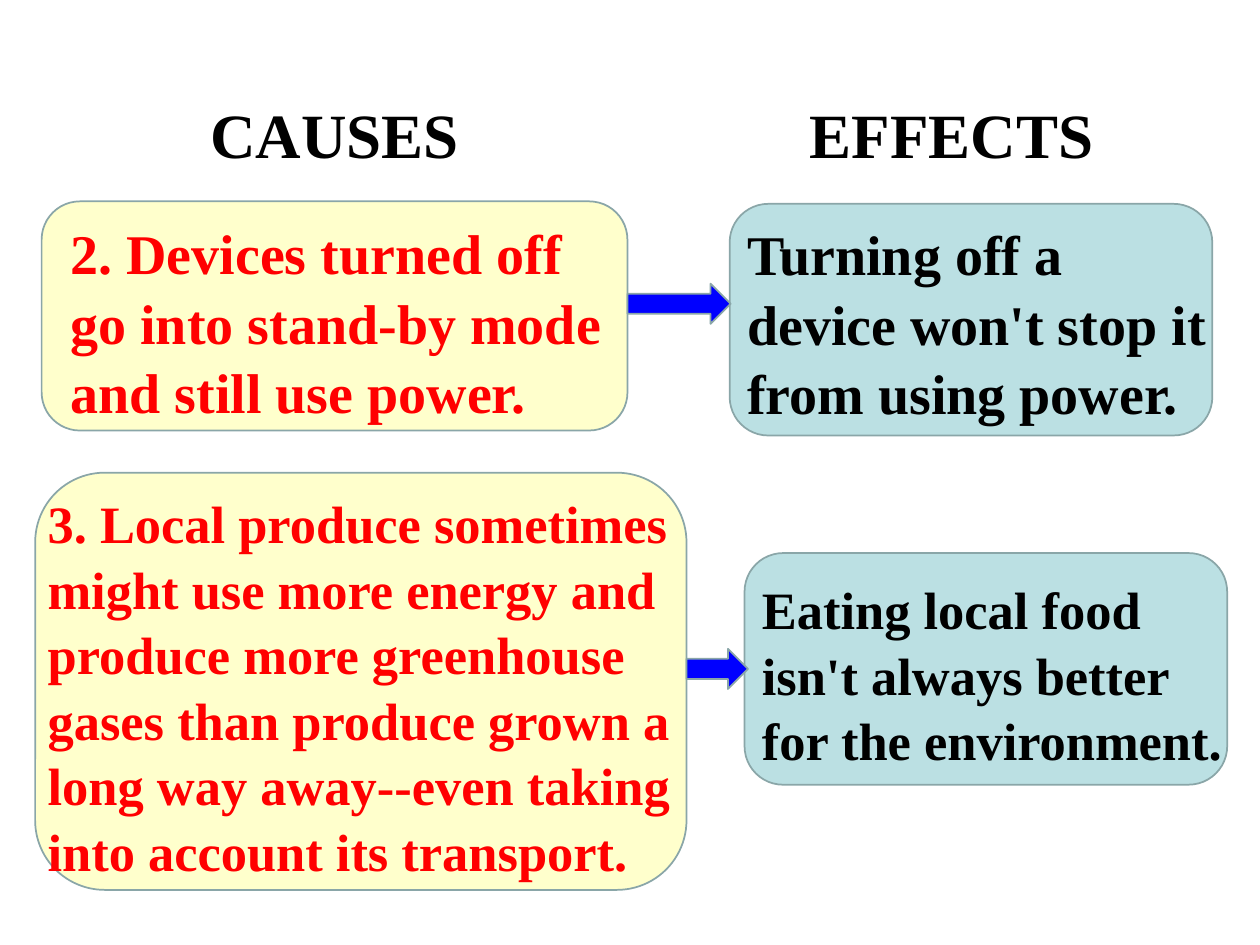
from pptx import Presentation, util as u
from pptx.dml.color import RGBColor
from pptx.enum import shapes, text

BLACK, RED, BLUE = "000000", "FF0000", "0000FF"
CREAM, TEAL, OUTLINE = "FFFFCC", "BBE0E3", "8AA6A8"


def colour(value):
    return RGBColor.from_string(value)


class CauseEffectSlide:
    font = "Times New Roman"
    line_width = u.Pt(1)
    line_spacing = 1.04

    def __init__(self, deck):
        self.slide = deck.slides.add_slide(deck.slide_layouts[6])

    def shape(self, kind, place, fill):
        shape = self.slide.shapes.add_shape(kind, *map(u.Cm, place))
        shape.shadow.inherit = False
        shape.fill.solid()
        shape.fill.fore_color.rgb = colour(fill)
        shape.line.color.rgb = colour(OUTLINE)
        shape.line.width = self.line_width

    def panel(self, place, fill):
        self.shape(shapes.MSO_SHAPE.ROUNDED_RECTANGLE, place, fill)

    def arrow(self, left, top, width):
        self.shape(shapes.MSO_SHAPE.RIGHT_ARROW, (left, top, width, 0.81), BLUE)

    def label(self, place, wording, size, ink, wrap=True):
        box = self.slide.shapes.add_textbox(*map(u.Cm, place))
        frame = box.text_frame
        frame.word_wrap = wrap
        frame.auto_size = text.MSO_AUTO_SIZE.SHAPE_TO_FIT_TEXT
        para = frame.paragraphs[0]
        para.text = wording
        para.line_spacing = self.line_spacing
        para.font.name = self.font
        para.font.size = u.Pt(size)
        para.font.bold = True
        para.font.color.rgb = colour(ink)
        return para

    def heading(self, left, width, wording):
        para = self.label((left, 1.75, width, 1.8), wording, 36, BLACK, wrap=False)
        para.alignment = text.PP_ALIGN.CENTER


def main():
    deck = Presentation()
    deck.slide_width, deck.slide_height = u.Cm(25.4), u.Cm(19.05)
    page = CauseEffectSlide(deck)

    page.panel((15.01, 11.15, 9.73, 4.67), TEAL)
    page.panel((0.71, 9.53, 13.13, 8.41), CREAM)
    page.panel((14.71, 4.11, 9.73, 4.67), TEAL)
    page.panel((0.84, 4.06, 11.81, 4.62), CREAM)

    page.label((1.17, 4.22, 11.71, 4.37),
               "2. Devices turned off go into stand-by mode and still use power.",
               32, RED)
    page.label((14.81, 4.24, 10.13, 4.37),
               "Turning off a device won't stop it from using power.", 32, BLACK)
    page.label((0.71, 9.73, 13.34, 7.95),
               "3. Local produce sometimes might use more energy and produce more "
               "greenhouse gases than produce grown a long way away--even taking "
               "into account its transport.", 30, RED)
    page.label((15.11, 11.46, 10.01, 4.11),
               "Eating local food isn't always better for the environment.", 30, BLACK)

    page.heading(3.96, 5.56, "CAUSES")
    page.heading(16.05, 6.27, "EFFECTS")
    page.arrow(12.65, 5.72, 2.08)
    page.arrow(13.84, 13.08, 1.24)

    deck.save("out.pptx")


if __name__ == "__main__":
    main()
